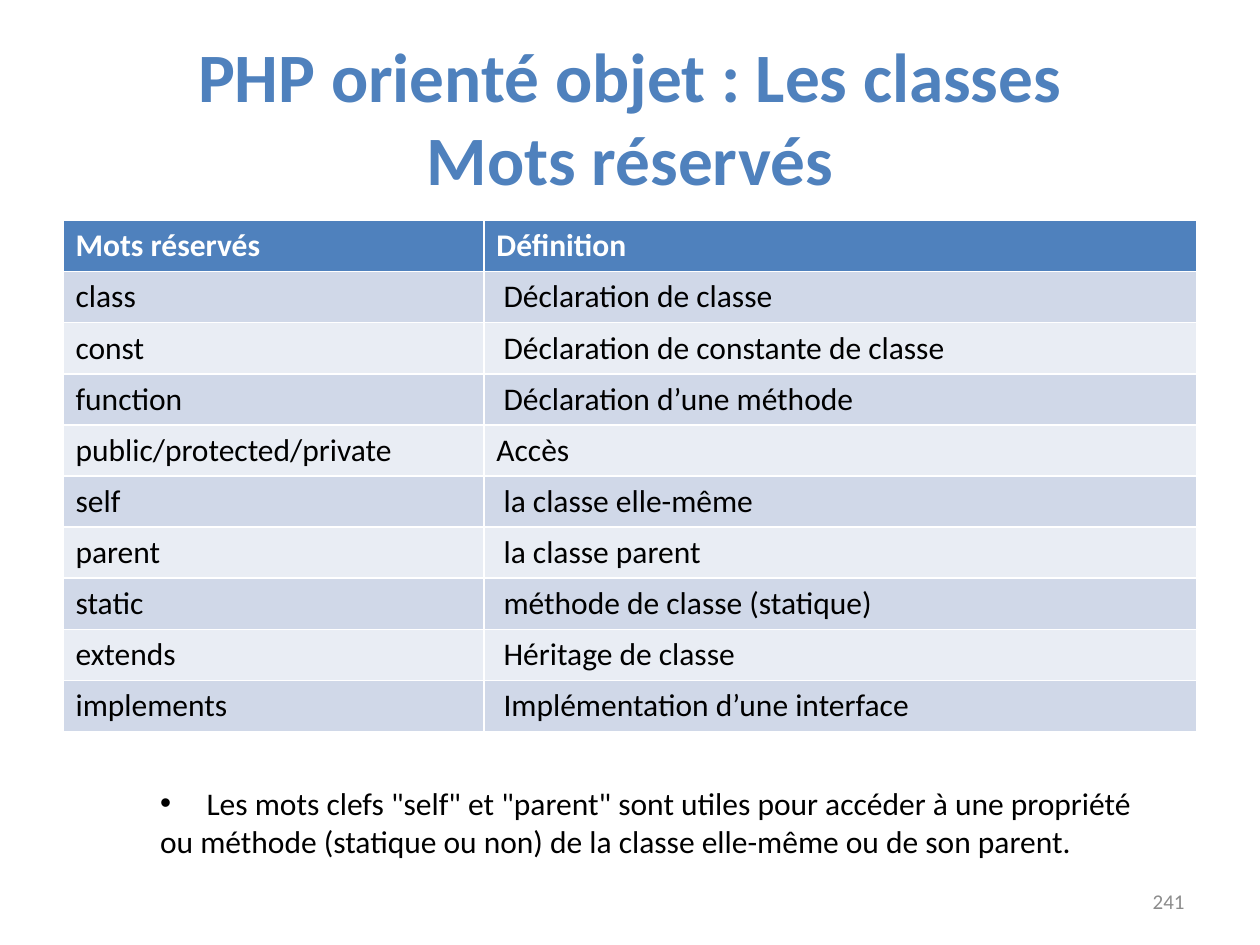
from pptx import Presentation
from pptx.util import Pt
from pptx.dml.color import RGBColor as RGB
from pptx.enum.text import PP_ALIGN as AL, MSO_ANCHOR as ANC
from pptx.oxml import parse_xml
from pptx.oxml.ns import nsdecls

BLUE = RGB(0x4F, 0x81, 0xBD)
DARK = RGB(0xD0, 0xD8, 0xE8)
PALE = RGB(0xE9, 0xED, 0xF4)
GREY = RGB(0x8C, 0x8C, 0x8C)
WHITE = RGB(0xFF, 0xFF, 0xFF)
BLACK = RGB(0, 0, 0)


def place(shape, left, top, width, height):
    box = dict(left=left, top=top, width=width, height=height)
    for key, val in box.items():
        setattr(shape, key, Pt(val))


def style(frame, size, color, bold=False, align=AL.LEFT):
    form = dict(name="Calibri", size=Pt(size), bold=bold)
    for para in frame.paragraphs:
        para.alignment = align
        for run in para.runs:
            for key, val in form.items():
                setattr(run.font, key, val)
            run.font.color.rgb = color


deck = Presentation()
deck.slide_width, deck.slide_height = Pt(720), Pt(540)
slide = deck.slides.add_slide(deck.slide_layouts[1])

title = slide.shapes.title
place(title, 36, 21.6, 648, 90)
title.text_frame.text = "PHP orienté objet : Les classes\vMots réservés"
title.text_frame.vertical_anchor = ANC.MIDDLE
style(title.text_frame, 39.6, BLUE, True, AL.CENTER)

rows = [
    ("Mots réservés", "Définition"),
    ("class", " Déclaration de classe"),
    ("const", " Déclaration de constante de classe"),
    ("function", " Déclaration d’une méthode"),
    ("public/protected/private", "Accès"),
    ("self", " la classe elle-même"),
    ("parent", " la classe parent"),
    ("static", " méthode de classe (statique)"),
    ("extends", " Héritage de classe"),
    ("implements", " Implémentation d’une interface"),
]
high = 29.2
grid = slide.shapes.add_table(
    len(rows), 2, Pt(36), Pt(126), Pt(648), Pt(high * len(rows))).table
for col, width in zip(grid.columns, (240.5, 407.5)):
    col.width = Pt(width)
for i, row in enumerate(rows):
    grid.rows[i].height = Pt(high)
    back = BLUE if i == 0 else DARK if i % 2 else PALE
    for j, text in enumerate(row):
        cell = grid.cell(i, j)
        cell.text = text
        cell.fill.solid()
        cell.fill.fore_color.rgb = back
        style(cell.text_frame, 18, BLACK if i else WHITE, i == 0)

body = slide.placeholders[1]
place(body, 84.25, 444.25, 576, 51)
note = body.text_frame
note.text = (
    ' Les mots clefs "self" et "parent" sont utiles pour accéder à une propriété\n'
    "ou méthode (statique ou non) de la classe elle-même ou de son parent.")
note.word_wrap = True
style(note, 18, BLACK)
marks = ('<a:buChar %s char="•"/>', "<a:buNone %s/>")
for para, mark, inset in zip(note.paragraphs, marks, (22.5, 0)):
    para.space_before = Pt(0)
    props = para._p.get_or_add_pPr()
    props.set("marL", str(Pt(inset)))
    props.set("indent", str(Pt(-inset)))
    props.append(parse_xml(mark % nsdecls("a")))

page = slide.shapes.add_textbox(Pt(516), Pt(500.5), Pt(168), Pt(28.75))
page.text_frame.text = "241"
page.text_frame.word_wrap = True
page.text_frame.vertical_anchor = ANC.MIDDLE
style(page.text_frame, 12, GREY, align=AL.RIGHT)

deck.save("out.pptx")
